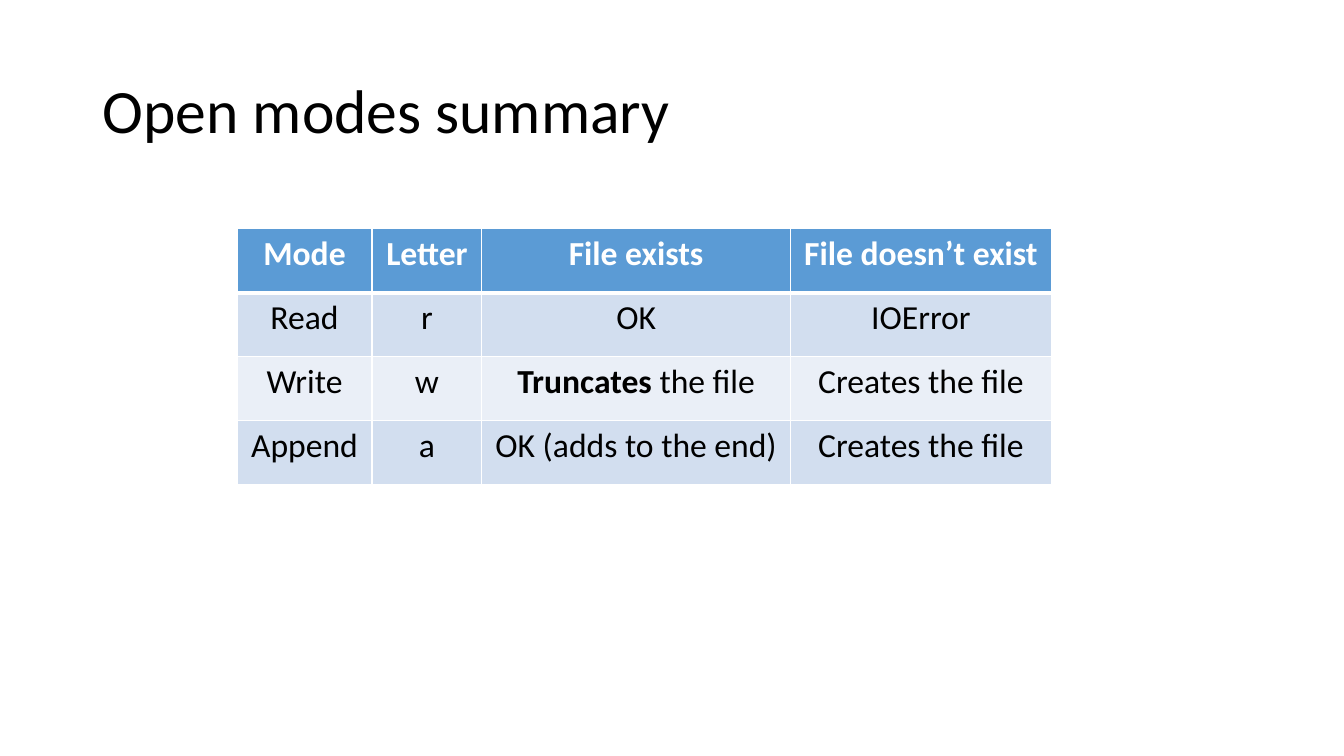
from pptx import Presentation
from pptx.dml.color import RGBColor
from pptx.enum.text import MSO_ANCHOR as Anchor, MSO_AUTO_SIZE as Fit, PP_ALIGN as Align
from pptx.oxml import parse_xml
from pptx.oxml.ns import nsdecls
from pptx.util import Inches, Pt


def style(run, color, **form):
    form = {"name": "Calibri", **form}
    for key, val in form.items():
        setattr(run.font, key, val)
    run.font.color.rgb = RGBColor.from_string(color)


def edge(cell, side, width):
    cell._tc.get_or_add_tcPr().append(parse_xml(
        f'<a:ln{side} {nsdecls("a")} w="{Pt(width)}"><a:solidFill>'
        f'<a:srgbClr val="FFFFFF"/></a:solidFill></a:ln{side}>'))


deck = Presentation()
deck.slide_width, deck.slide_height = Inches(13.33), Inches(7.5)
slide = deck.slides.add_slide(deck.slide_layouts[5])

# Title
title = slide.shapes.title
box = {"left": 0.92, "top": 0.4, "width": 11.5, "height": 1.45}
for key, val in box.items():
    setattr(title, key, Inches(val))
frame = title.text_frame
frame.auto_size = Fit.NONE
frame.vertical_anchor = Anchor.MIDDLE
para = frame.paragraphs[0]
para.alignment = Align.LEFT
para.line_spacing = 0.9
run = para.add_run()
run.text = "Open modes summary"
style(run, "000000", size=Pt(44))

# Table: a tuple holds a bold part and a plain part
rows = [
    ["Mode", "Letter", "File exists", "File doesn’t exist"],
    ["Read", "r", "OK", "IOError"],
    ["Write", "w", ("Truncates", " the file"), "Creates the file"],
    ["Append", "a", "OK (adds to the end)", "Creates the file"],
]
fills = ["5B9BD5", "D2DEEF", "EAEFF7", "D2DEEF"]
wide = [1.34, 1.09, 3.06, 2.59]
high = 0.635
table = slide.shapes.add_table(
    len(rows), len(wide), Inches(2.35), Inches(2.27),
    Inches(sum(wide)), Inches(high * len(rows))).table
for col, width in zip(table.columns, wide):
    col.width = Inches(width)

# Cells
for i, row in enumerate(rows):
    table.rows[i].height = Inches(high)
    head = i == 0
    for j, item in enumerate(row):
        cell = table.cell(i, j)
        sides = {"L": 1, "R": 1, "T": 3 if i == 1 else 1, "B": 3 if head else 1}
        for side, width in sides.items():
            edge(cell, side, width)
        cell.fill.solid()
        cell.fill.fore_color.rgb = RGBColor.from_string(fills[i])
        para = cell.text_frame.paragraphs[0]
        para.alignment = Align.CENTER
        split = isinstance(item, tuple)
        for n, text in enumerate(item if split else [item]):
            run = para.add_run()
            run.text = text
            style(run, "FFFFFF" if head else "000000",
                  size=Pt(24), bold=head or (split and n == 0))

deck.save("out.pptx")
